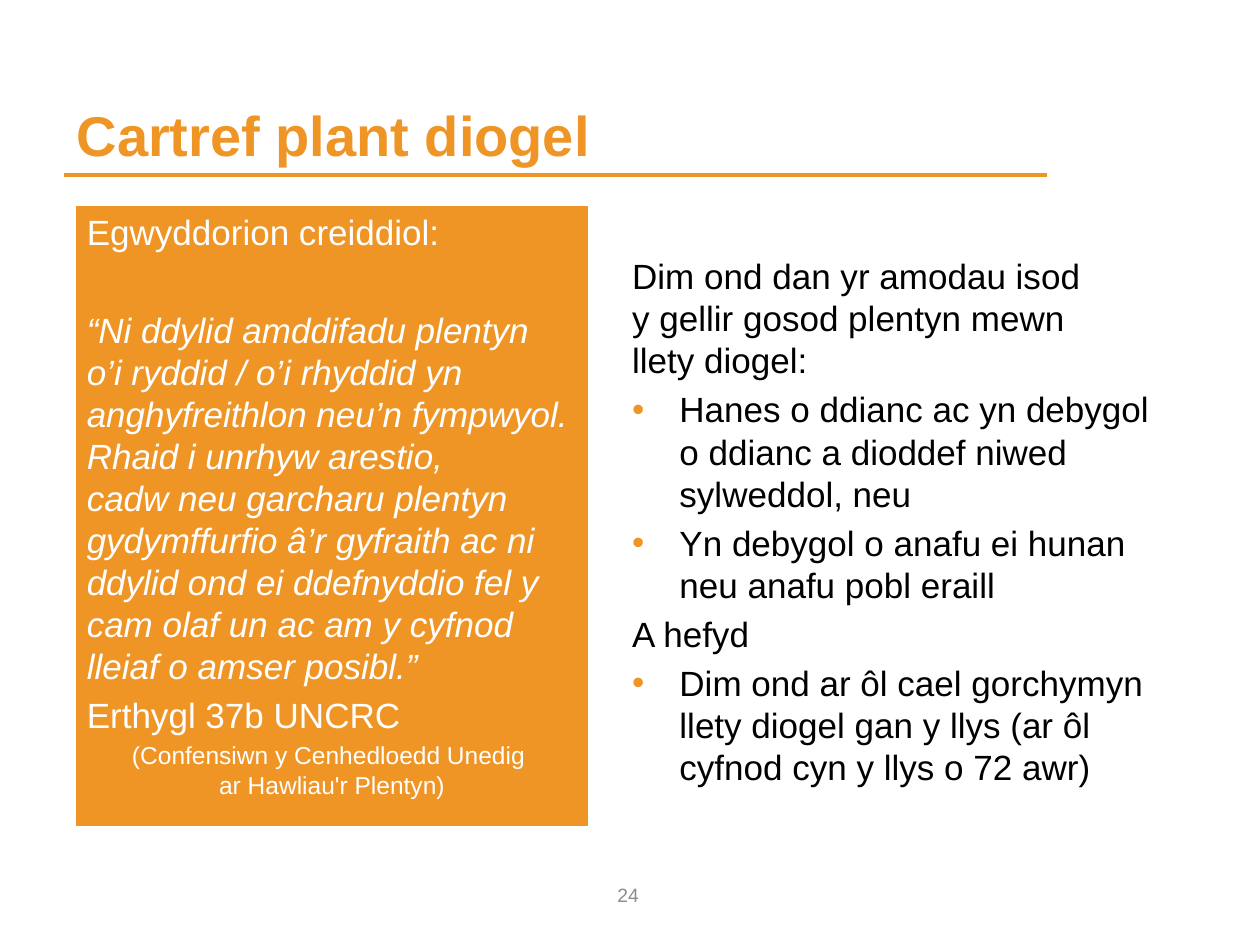
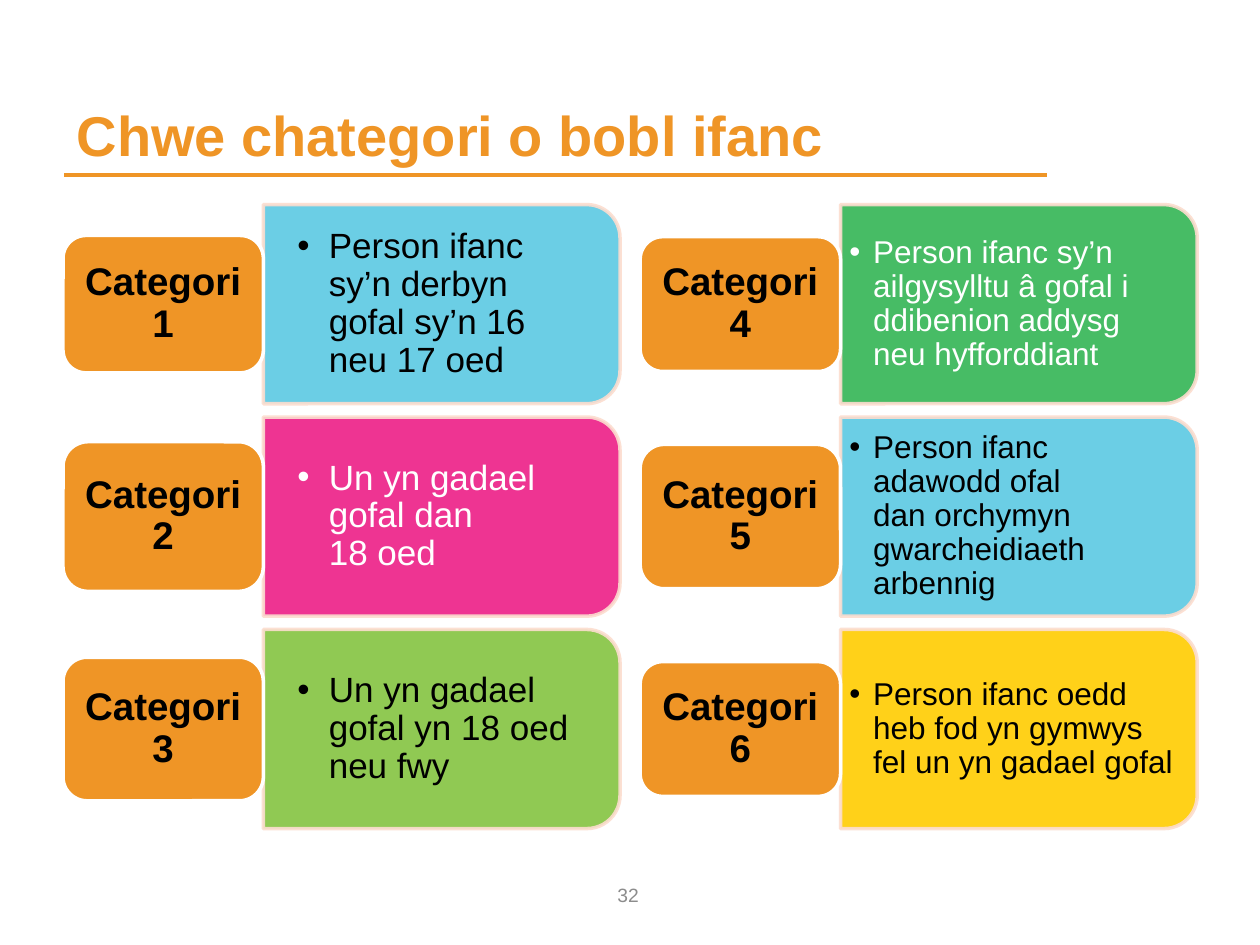
from copy import deepcopy
from lxml import etree
from pptx import Presentation
from pptx.dml.color import RGBColor
from pptx.enum import shapes, text
from pptx.oxml import ns
from pptx.util import Pt

HUE = {"orange": "EF9526", "white": "FFFFFF", "black": "000000", "grey": "8C8C8C",
       "blue": "5CC9E3", "pink": "ED1E87", "lime": "85C441", "green": "34B555",
       "gold": "FFCC00", "peach": "FCDDCF"}
KIND = shapes.MSO_SHAPE
ALIGN = {"l": text.PP_ALIGN.LEFT, "c": text.PP_ALIGN.CENTER}
ROOM = {"t": text.MSO_ANCHOR.TOP, "m": text.MSO_ANCHOR.MIDDLE, "b": text.MSO_ANCHOR.BOTTOM}

HOME = {"title": "Cartref plant diogel", "page": "24"}
RIGHTS = [
    ("Egwyddorion creiddiol:", {}),
    ("“Ni ddylid amddifadu plentyn \no’i ryddid / o’i rhyddid yn anghyfreithlon neu’n "
     "fympwyol. Rhaid i unrhyw arestio, \ncadw neu garcharu plentyn gydymffurfio â’r "
     "gyfraith ac ni ddylid ond ei ddefnyddio fel y cam olaf un ac am y cyfnod lleiaf "
     "o amser posibl.”", {"italic": True, "before": 32}),
    ("Erthygl 37b UNCRC", {"before": 4}),
    ("(Confensiwn y Cenhedloedd Unedig \nar Hawliau'r Plentyn)",
     {"size": 14, "align": "c", "before": 2.8}),
]
DOT = {"dot": "orange", "hang": 27, "before": 4}
TERMS = [
    ("Dim ond dan yr amodau isod \ny gellir gosod plentyn mewn \nllety diogel:", {}),
    ("Hanes o ddianc ac yn debygol \no ddianc a dioddef niwed sylweddol, neu", DOT),
    ("Yn debygol o anafu ei hunan neu anafu pobl eraill", DOT),
    ("A hefyd", {"before": 4}),
    ("Dim ond ar ôl cael gorchymyn llety diogel gan y llys (ar ôl cyfnod cyn y llys "
     "o 72 awr)", DOT),
]

YOUTH = {"title": "Chwe chategori o bobl ifanc", "page": "32"}
GROUPS = [
    ("Person ifanc sy’n derbyn gofal sy’n 16 neu 17 oed", "blue", "black", 78.5),
    ("Un yn gadael gofal dan \n18 oed", "pink", "white", 85.5),
    ("Un yn gadael gofal yn 18 oed neu fwy", "lime", "black", 82),
    ("Person ifanc sy’n ailgysylltu â gofal i ddibenion addysg neu hyfforddiant",
     "green", "white", 77),
    ("Person ifanc adawodd ofal \ndan orchymyn gwarcheidiaeth arbennig",
     "blue", "black", 82.5),
    ("Person ifanc oedd heb fod yn gymwys fel un yn gadael gofal",
     "gold", "black", 77),
]
STYLES = [
    {"size": 20, "hang": 18, "pad": (19.4, 10, 19.4, 10)},
    {"size": 18, "hang": 13.7, "pad": (5, 2.9, 5, 2.9)},
]
LEFT, MID = 36, 173.8
STEP_X, STEP_Y = 329.8, 121.4
TAG_W, PANEL_W, PANEL_H, NOTE_W, NOTE_H = 114.5, 203.8, 113.8, 198, 103


def tint(name):
    return RGBColor.from_string(HUE[name])


def child(node, tag, **attrs):
    return etree.SubElement(node, ns.qn("a:" + tag), attrs)


def bullet(par, hue, hang):
    prop = par._p.get_or_add_pPr()
    prop.set("marL", str(Pt(hang)))
    prop.set("indent", str(-Pt(hang)))
    child(child(prop, "buClr"), "srgbClr", val=HUE[hue])
    child(prop, "buFont", typeface="Arial")
    child(prop, "buChar", char="•")


def line(par, words, size=20, hue="black", bold=False, italic=False, align="l",
         before=0, space=None, dot=None, hang=0):
    par.text = words
    par.alignment = ALIGN[align]
    par.space_before = Pt(before)
    if space:
        par.line_spacing = space
    if dot:
        bullet(par, dot, hang)
    for run in par.runs:
        font = run.font
        font.name, font.size, font.bold, font.italic = "Arial", Pt(size), bold, italic
        font.color.rgb = tint(hue)
    look = par.runs[0]._r.rPr
    for gap in par._p.findall(ns.qn("a:br")):
        gap.insert(0, deepcopy(look))


def write(shape, rows, anchor="t", pad=(7.2, 3.6, 7.2, 3.6), **base):
    if isinstance(rows, str):
        rows = [(rows, {})]
    frame = shape.text_frame
    frame.word_wrap = True
    frame.vertical_anchor = ROOM[anchor]
    (frame.margin_left, frame.margin_top,
     frame.margin_right, frame.margin_bottom) = map(Pt, pad)
    for num, (words, form) in enumerate(rows):
        par = frame.add_paragraph() if num else frame.paragraphs[0]
        line(par, words, **{**base, **form})


def label(slide, box, rows, **form):
    write(slide.shapes.add_textbox(*map(Pt, box)), rows, **form)


def block(slide, kind, box, fill, edge="white", width=2):
    shape = slide.shapes.add_shape(kind, *map(Pt, box))
    shape.shadow.inherit = False
    shape.fill.solid()
    shape.fill.fore_color.rgb = tint(fill)
    shape.line.color.rgb = tint(edge)
    shape.line.width = Pt(width)
    return shape


def fade(shape, share):
    for hue in shape._element.spPr.iter(ns.qn("a:srgbClr")):
        child(hue, "alpha", val=str(share * 1000))


def start(deck, info):
    slide = deck.slides.add_slide(deck.slide_layouts[6])
    rule = slide.shapes.add_connector(shapes.MSO_CONNECTOR.STRAIGHT,
                                      Pt(36.7), Pt(100), Pt(598.3), Pt(100))
    rule.line.color.rgb = tint("orange")
    rule.line.width = Pt(2)
    child(rule._element.spPr, "effectLst")
    label(slide, (36.7, 21, 561.6, 78.4), info["title"],
          anchor="b", size=32, hue="orange", bold=True)
    label(slide, (275, 497, 167.8, 28.8), info["page"],
          anchor="m", size=11, hue="grey", align="c")
    return slide


def home(deck):
    slide = start(deck, HOME)
    card = block(slide, KIND.RECTANGLE, (42.5, 116.6, 294.5, 356.4), "orange")
    write(card, RIGHTS, hue="white")
    label(slide, (354.2, 116.6, 329, 380), TERMS, pad=(7.2, 29.1, 7.2, 3.6))


def youth(deck):
    slide = start(deck, YOUTH)
    for num, (words, fill, ink, high) in enumerate(GROUPS):
        col, row = divmod(num, 3)
        left, mid = LEFT + col * STEP_X, MID + row * STEP_Y
        edge = left + TAG_W
        turn = (edge + (PANEL_W - PANEL_H) / 2, mid - PANEL_W / 2, PANEL_H, PANEL_W)
        panel = block(slide, KIND.ROUND_2_SAME_RECTANGLE, turn, fill, "peach")
        panel.rotation = 90
        fade(panel, 90)
        label(slide, (edge, mid - NOTE_H / 2, NOTE_W, NOTE_H), words,
              anchor="m", hue=ink, dot=ink, space=0.9, **STYLES[col])
        tag = block(slide, KIND.ROUNDED_RECTANGLE,
                    (left, mid - high / 2, TAG_W, high), "orange")
        write(tag, f"Categori {num + 1}", anchor="m", pad=(6.6, 3.3, 6.6, 3.3),
              size=22, bold=True, align="c", space=0.9)


def main():
    deck = Presentation()
    deck.slide_width, deck.slide_height = Pt(720), Pt(540)
    home(deck)
    youth(deck)
    deck.save("out.pptx")


if __name__ == "__main__":
    main()
